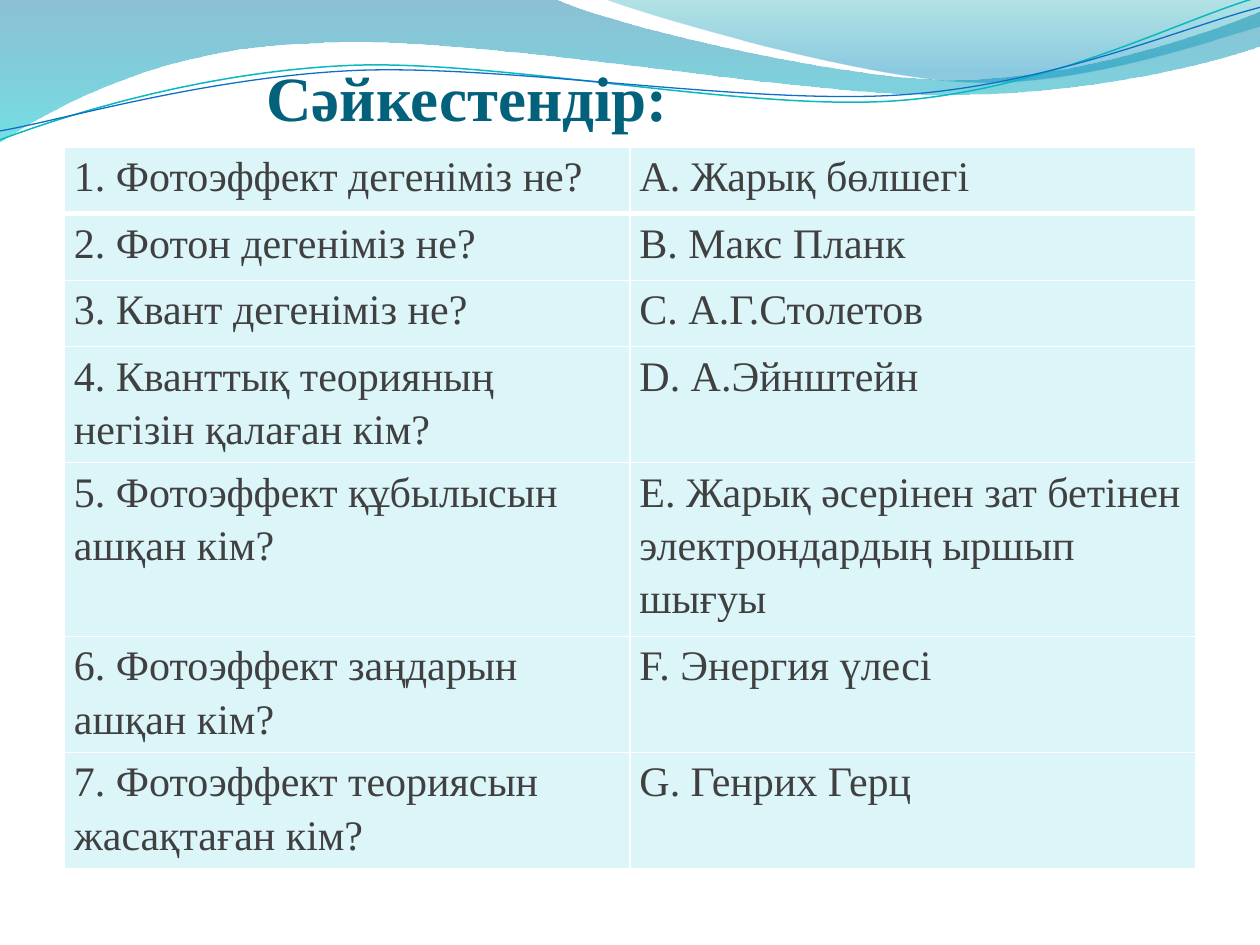
from dataclasses import dataclass

from lxml.etree import SubElement
from pptx import Presentation
from pptx.dml.color import RGBColor
from pptx.enum.text import MSO_ANCHOR as Anchor, PP_ALIGN as Align
from pptx.oxml.ns import qn
from pptx.util import Cm, Pt


@dataclass(frozen=True)
class Theme:
    font: str = "Times New Roman"
    head: str = "04617B"
    text: str = "404040"
    cell: str = "DBF5F9"
    rule: str = "FFFFFF"
    big: int = 36
    body: int = 24


THEME = Theme()

# Wave outlines in cm: a pair is a straight step, six numbers are a cubic curve
BANDS = [
    ([(0, 0), (11.18, -0.03),
      (12.09, 0.43, 16.87, 1.6, 19.25, 1.6),
      (21.67, 1.6, 24.33, 0.66, 25.4, 0.23), (25.43, 0.91),
      (24.97, 1.12, 22.1, 1.93, 18.95, 1.91),
      (15.8, 1.91, 9.7, 0.71, 6.53, 0.86),
      (3.28, 0.91, 1.17, 2.11, -0.03, 2.87), (0, 0)],
     [(0, "0074A1", 45), (1, "00C6CF", 55)]),
    ([(12.17, -0.03),
      (12.93, 0.28, 17.32, 1.57, 19.53, 1.65),
      (21.74, 1.75, 24.41, 0.81, 25.4, 0.53), (25.4, 0), (12.17, -0.03)],
     [(0, "00A1A9", 30), (0.8, "008BBF", 45)]),
]
LINES = [
    ([(0, 2.82), (1.22, 2.36, 4.01, 1.45, 7.04, 1.32),
      (10.03, 1.19, 15.06, 2.26, 18.11, 2.03),
      (21.16, 1.8, 23.83, 0.38, 25.35, -0.05)], "0AB8BF", 0.85),
    ([(0, 2.64), (1.19, 2.44, 4.17, 1.55, 7.19, 1.42),
      (10.24, 1.3, 15.16, 2.13, 18.21, 1.91),
      (21.23, 1.7, 23.9, 0.53, 25.4, 0.15)], "0F6FC6", 0.75),
]

# Question, answer, row height in cm
ROWS = [
    ("1. Фотоэффект дегеніміз не?", "А. Жарық бөлшегі", 1.34),
    ("2. Фотон дегеніміз не?", "В. Макс Планк", 1.34),
    ("3. Квант дегеніміз не?", "С. А.Г.Столетов", 1.34),
    ("4. Кванттық теорияның негізін қалаған кім?", "D. А.Эйнштейн", 2.15),
    ("5. Фотоэффект құбылысын ашқан кім?",
     "Е. Жарық әсерінен зат бетінен электрондардың ыршып шығуы", 3.23),
    ("6. Фотоэффект заңдарын ашқан кім?", "F. Энергия үлесі", 2.15),
    ("7. Фотоэффект теориясын жасақтаған кім?", "G. Генрих Герц", 2.15),
]


def apply(obj, vals):
    for name, val in vals.items():
        setattr(obj, name, val)


def rgb(code):
    return RGBColor.from_string(code)


def bend(shape, steps):
    """Join the three points of each curved step into one cubic curve."""
    lines = iter(list(shape.element.spPr.iter(qn("a:lnTo"))))
    for step in steps[1:]:
        node = next(lines)
        if len(step) == 6:
            curve = node.makeelement(qn("a:cubicBezTo"))
            node.addprevious(curve)
            for part in (node, next(lines), next(lines)):
                curve.append(part[0])
                part.getparent().remove(part)


def draw(slide, box, steps, close):
    pts = [(Cm(box[0] + step[i]), Cm(box[1] + step[i + 1]))
           for step in steps for i in range(0, len(step), 2)]
    pen = slide.shapes.build_freeform(*pts[0])
    pen.add_line_segments(pts[1:], close=close)
    shape = pen.convert_to_shape()
    bend(shape, steps)
    shape.shadow.inherit = False
    return shape


def add_waves(slide, box):
    # Translucent gradient bands
    for steps, stops in BANDS:
        shape = draw(slide, box, steps, True)
        shape.line.fill.background()
        shape.fill.gradient()
        shape.fill.gradient_angle = 270
        for stop, (pos, code, _) in zip(shape.fill.gradient_stops, stops):
            stop.position = pos
            stop.color.rgb = rgb(code)
        for node, (_, _, alpha) in zip(shape.element.spPr.iter(qn("a:srgbClr")), stops):
            SubElement(node, qn("a:alpha"), val=str(alpha * 1000))
    # Thin lines
    for steps, code, width in LINES:
        shape = draw(slide, box, steps, False)
        shape.fill.background()
        shape.line.color.rgb = rgb(code)
        shape.line.width = Pt(width)


def write(frame, text, form, face, code):
    para = frame.paragraphs[0]
    apply(para, {"line_spacing": 1.15, **form})
    run = para.add_run()
    run.text = text
    apply(run.font, {"name": THEME.font, **face})
    run.font.color.rgb = rgb(code)


def add_title(slide, box):
    frame = slide.shapes.add_textbox(*map(Cm, box)).text_frame
    apply(frame, {"word_wrap": True, "vertical_anchor": Anchor.BOTTOM,
                  "margin_left": 0, "margin_right": 0,
                  "margin_top": Cm(0.13), "margin_bottom": 0})
    write(frame, "Cәйкестендір:", {"alignment": Align.CENTER, "space_after": Pt(10)},
          {"size": Pt(THEME.big), "bold": True}, THEME.head)


def edge(cell, widths):
    props = cell._tc.get_or_add_tcPr()
    for i, (side, width) in enumerate(widths.items()):
        line = SubElement(props, qn("a:ln" + side), w=str(Pt(width)))
        fill = SubElement(line, qn("a:solidFill"))
        SubElement(fill, qn("a:srgbClr"), val=THEME.rule)
        props.insert(i, line)


def add_pairs(slide, box):
    table = slide.shapes.add_table(len(ROWS), 2, *map(Cm, box)).table
    table.horz_banding = False
    for col in table.columns:
        col.width = Cm(box[2] / 2)
    for r, (*texts, height) in enumerate(ROWS):
        table.rows[r].height = Cm(height)
        for c, text in enumerate(texts):
            cell = table.cell(r, c)
            apply(cell, {"margin_left": Cm(0.19), "margin_right": Cm(0.19),
                         "margin_top": 0, "margin_bottom": 0})
            cell.fill.solid()
            cell.fill.fore_color.rgb = rgb(THEME.cell)
            # A thick rule sets off the first row
            edge(cell, {"L": 1, "R": 1, "T": 3 if r == 1 else 1, "B": 3 if r == 0 else 1})
            write(cell.text_frame, text, {"alignment": Align.LEFT},
                  {"size": Pt(THEME.body), "bold": False}, THEME.text)


def main():
    deck = Presentation()
    apply(deck, {"slide_width": Cm(25.4), "slide_height": Cm(19.05)})
    slide = deck.slides.add_slide(deck.slide_layouts[6])
    add_waves(slide, (0, 0))
    add_title(slide, (4.3, 0.93, 10.24, 1.78))
    add_pairs(slide, (1.3, 2.97, 22.8, sum(row[2] for row in ROWS)))
    deck.save("out.pptx")


if __name__ == "__main__":
    main()
